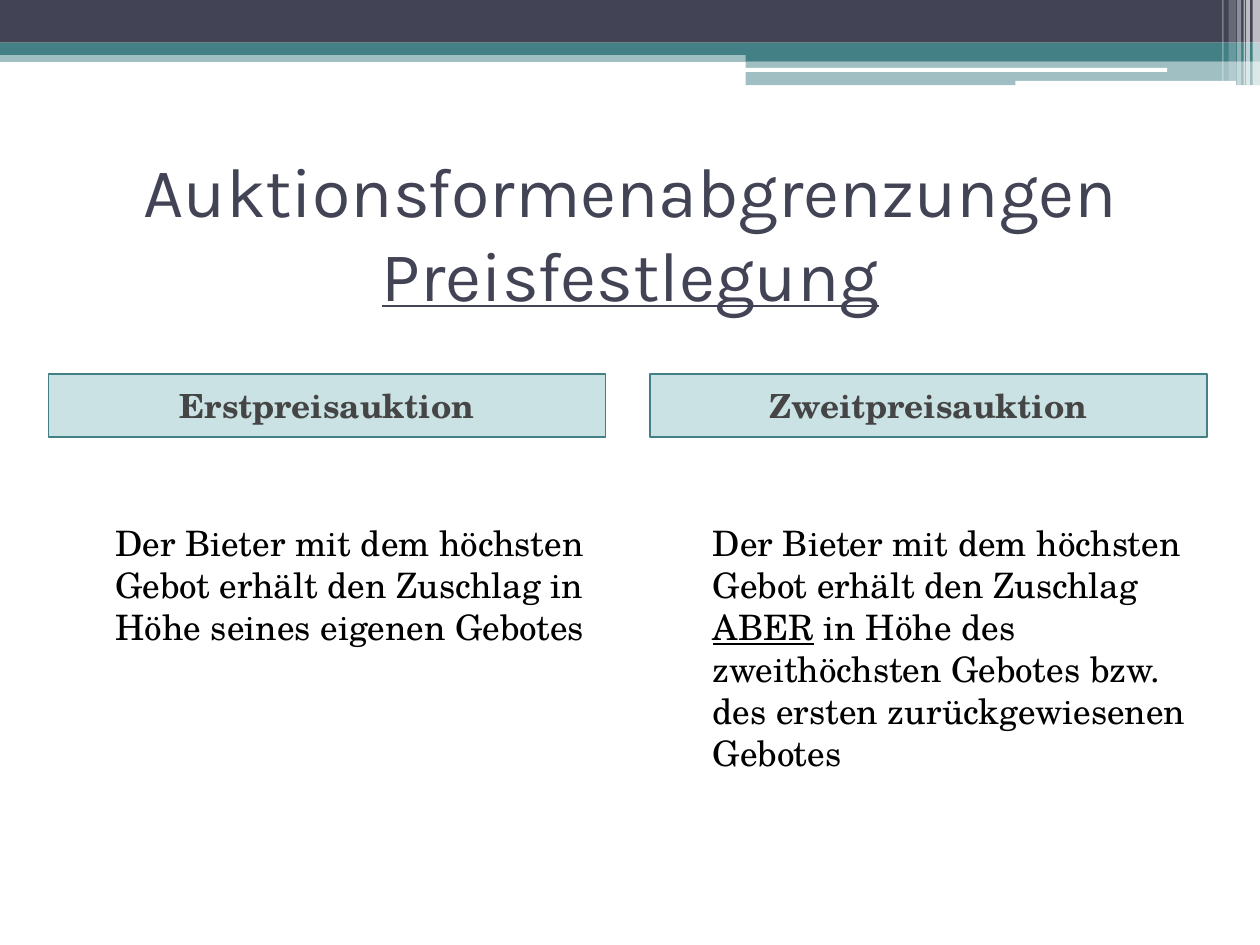
from dataclasses import dataclass

from lxml.etree import SubElement
from pptx import Presentation
from pptx.dml.color import RGBColor
from pptx.enum.shapes import MSO_SHAPE
from pptx.enum.text import MSO_ANCHOR, PP_ALIGN
from pptx.oxml.ns import qn
from pptx.util import Cm, Pt

NAVY = RGBColor(0x42, 0x44, 0x56)
TEAL = RGBColor(0x43, 0x80, 0x86)
HEADER_TEAL = RGBColor(0x32, 0x8E, 0x97)
WHITE = RGBColor(0xFF, 0xFF, 0xFF)
GRAY = RGBColor(0x45, 0x45, 0x45)
BLACK = RGBColor(0, 0, 0)

TITLE_FONT = "Karla"
BODY_FONT = "TeX Gyre Schola"
COLUMN_WIDTH = 11.23


@dataclass
class Box:
    """A filled shape, with lengths in centimetres and opacity in percent."""
    left: float
    top: float
    width: float
    height: float
    color: RGBColor
    opacity: int = 100
    rounded: bool = False


@dataclass
class Column:
    header_left: float
    body_left: float
    header: str
    body: list[tuple[str, bool]]  # text, underlined


BANDS = [
    Box(0, 1.02, 25.4, 0.23, TEAL, 50),
    Box(0, 0, 25.4, 0.86, NAVY),
    Box(0, 0.86, 25.4, 0.25, TEAL),
    Box(15.03, 0.99, 10.37, 0.24, TEAL),
    Box(15.03, 1.23, 10.37, 0.49, TEAL, 50),
    Box(15.02, 1.37, 8.51, 0.08, WHITE, rounded=True),
    Box(20.47, 1.63, 4.45, 0.1, WHITE, rounded=True),
]

# Left, width, height and opacity of the upright stripes in the corner
STRIPES = [
    Box(left, 0, width, height, WHITE, opacity)
    for left, width, height, opacity in [
        (25.25, 0.15, 1.73, 65), (25.12, 0.08, 1.73, 65),
        (25.07, 0.03, 1.73, 60), (24.94, 0.08, 1.73, 40),
        (24.77, 0.15, 1.63, 20), (24.64, 0.03, 1.63, 30),
    ]
]

COLUMNS = [
    Column(0.98, 1.06, "Erstpreisauktion", [
        ("Der Bieter mit dem höchsten Gebot erhält den Zuschlag in "
         "Höhe seines eigenen Gebotes", False),
    ]),
    Column(13.1, 13.1, "Zweitpreisauktion", [
        ("Der Bieter mit dem höchsten Gebot erhält den Zuschlag ", False),
        ("ABER", True),
        (" in Höhe des zweithöchsten Gebotes bzw. des ersten "
         "zurückgewiesenen Gebotes", False),
    ]),
]


def add_run(paragraph, text: str, *, font: str, size: float, color: RGBColor,
            bold: bool = False, underline: bool = False) -> None:
    run = paragraph.add_run()
    run.text = text
    run.font.name = font
    run.font.size = Pt(size)
    run.font.color.rgb = color
    run.font.bold = bold
    run.font.underline = underline


def add_box(slide, box: Box):
    kind = MSO_SHAPE.ROUNDED_RECTANGLE if box.rounded else MSO_SHAPE.RECTANGLE
    shape = slide.shapes.add_shape(
        kind, Cm(box.left), Cm(box.top), Cm(box.width), Cm(box.height))
    shape.shadow.inherit = False
    shape.fill.solid()
    shape.fill.fore_color.rgb = box.color
    shape.line.fill.background()
    if box.opacity < 100:
        color_element = shape._element.spPr.find(qn("a:solidFill"))[0]
        SubElement(color_element, qn("a:alpha"), val=str(box.opacity * 1000))
    return shape


def add_title(slide) -> None:
    title = slide.shapes.title
    title.left, title.top = Cm(1.06), Cm(3.18)
    title.width, title.height = Cm(23.29), Cm(2.97)
    title.text_frame.vertical_anchor = MSO_ANCHOR.MIDDLE
    title.text_frame.word_wrap = True
    paragraph = title.text_frame.paragraphs[0]
    paragraph.alignment = PP_ALIGN.CENTER
    style = dict(font=TITLE_FONT, size=40, color=NAVY)
    add_run(paragraph, "Auktionsformenabgrenzungen", **style)
    paragraph.add_line_break()
    add_run(paragraph, "Preisfestlegung", underline=True, **style)


def add_column(slide, column: Column) -> None:
    # Framed heading
    header = add_box(slide, Box(column.header_left, 7.54, COLUMN_WIDTH, 1.27,
                                HEADER_TEAL, 25))
    header.line.color.rgb = TEAL
    header.line.width = Pt(1)
    header.text_frame.vertical_anchor = MSO_ANCHOR.MIDDLE
    paragraph = header.text_frame.paragraphs[0]
    paragraph.alignment = PP_ALIGN.CENTER
    paragraph.space_before = Pt(3)
    add_run(paragraph, column.header, font=BODY_FONT, size=19, color=GRAY,
            bold=True)

    # Explanation
    body = slide.shapes.add_textbox(
        Cm(column.body_left), Cm(10.38), Cm(COLUMN_WIDTH), Cm(7.93))
    body.text_frame.word_wrap = True
    body.text_frame.margin_left = Cm(1.27)
    paragraph = body.text_frame.paragraphs[0]
    paragraph.space_before = Pt(3)
    for text, underline in column.body:
        add_run(paragraph, text, font=BODY_FONT, size=20, color=BLACK,
                underline=underline)


def main() -> None:
    presentation = Presentation()
    presentation.slide_width, presentation.slide_height = Cm(25.4), Cm(19.05)
    slide = presentation.slides.add_slide(presentation.slide_layouts[5])
    for box in BANDS + STRIPES:
        add_box(slide, box)
    add_title(slide)
    for column in COLUMNS:
        add_column(slide, column)
    presentation.save("out.pptx")


if __name__ == "__main__":
    main()
